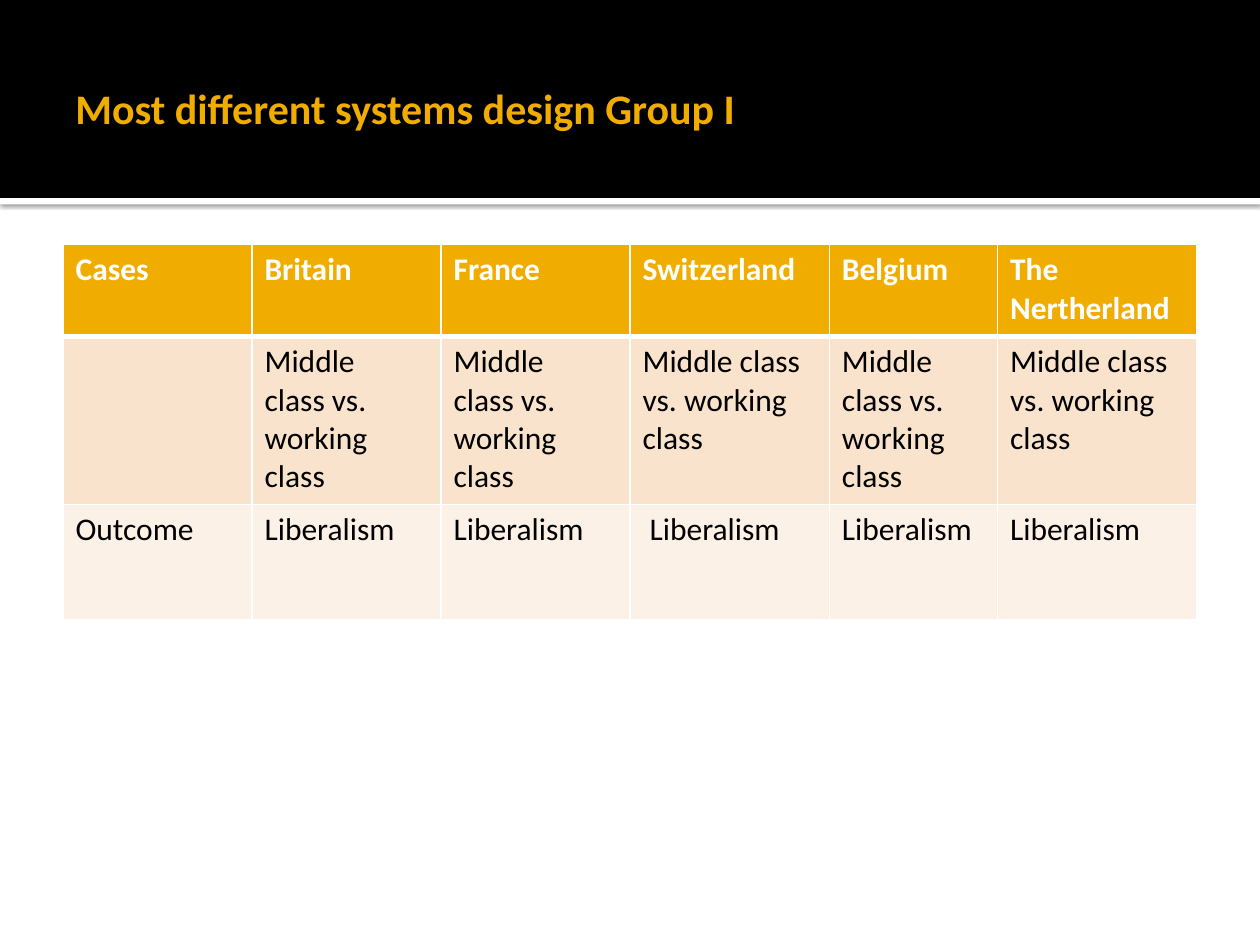
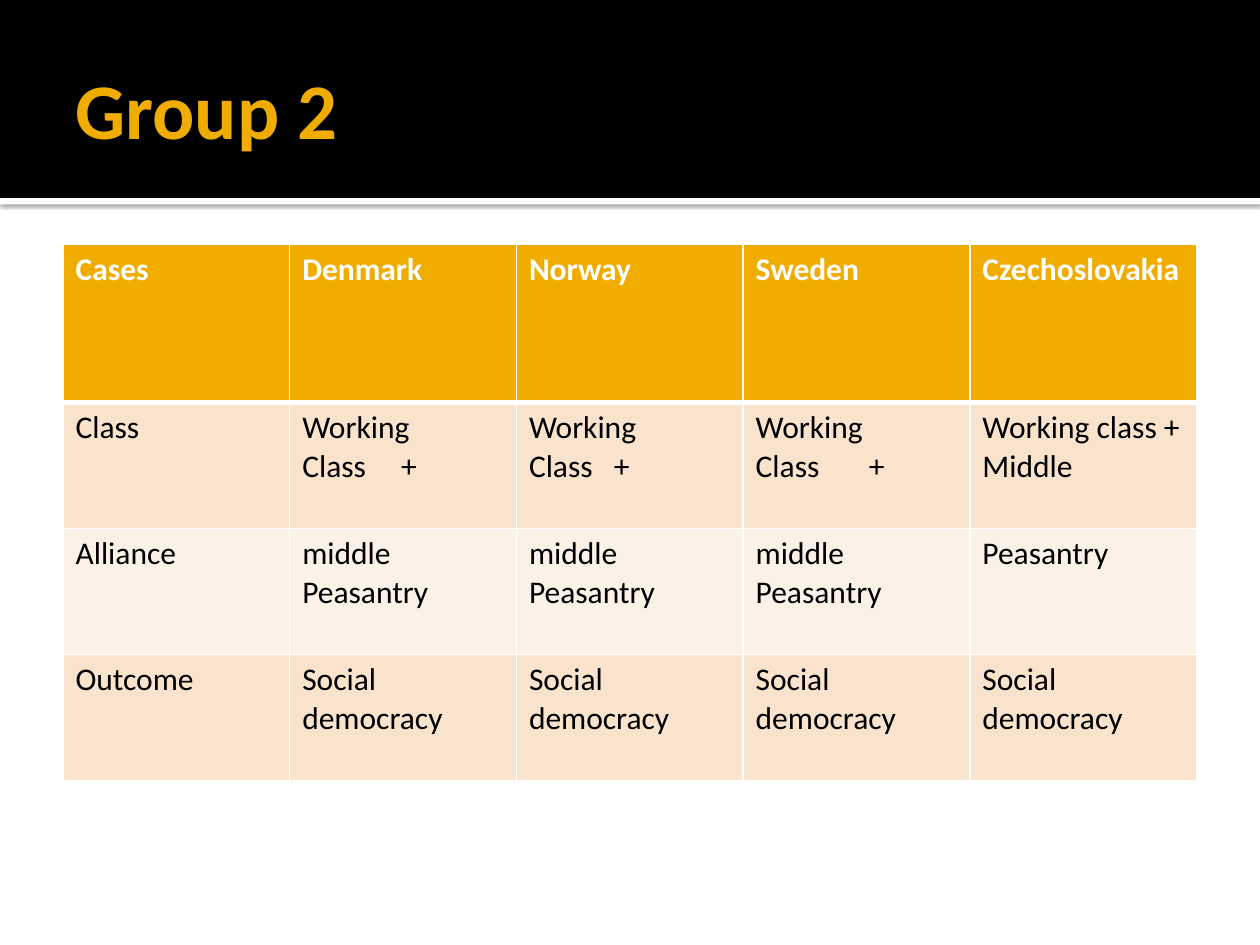
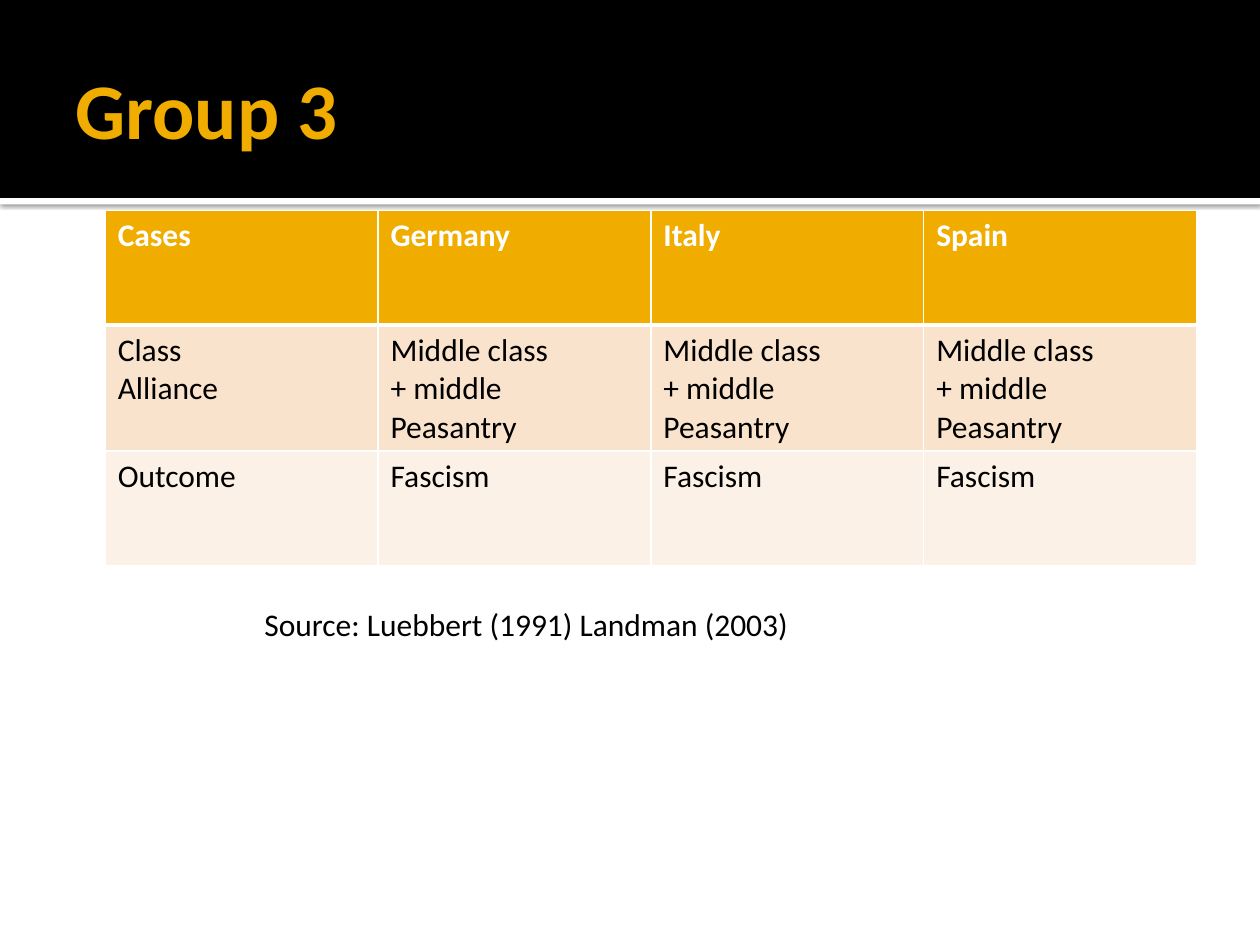
from dataclasses import dataclass

from lxml import etree
from pptx import Presentation
from pptx.dml.color import RGBColor
from pptx.enum.shapes import MSO_SHAPE
from pptx.enum.text import MSO_ANCHOR
from pptx.oxml import parse_xml
from pptx.oxml.ns import nsdecls, qn
from pptx.util import Cm, Pt

RECTANGLE = MSO_SHAPE.RECTANGLE
MIDDLE = MSO_ANCHOR.MIDDLE

FONT = "Calibri"
BODY_SIZE = 18
COLORS = {
    "black": "000000",
    "white": "FFFFFF",
    "gold": "F0AD00",
    "peach": "F9E3CC",
    "cream": "FCF1E7",
}
SLIDE_WIDTH, SLIDE_HEIGHT = 25.4, 19.05
BAND_HEIGHT = 3.99
STRIP_HEIGHT = 0.13
THIN, THICK = 1, 3


@dataclass(frozen=True)
class Box:
    left: float
    top: float
    width: float
    height: float


@dataclass(frozen=True)
class CaseTable:
    left: float
    top: float
    widths: list[float]
    heights: list[float]
    rows: list[list[str]]


@dataclass(frozen=True)
class GroupSlide:
    title: str
    cases: CaseTable
    title_size: int = 45
    source: str = ""


TITLE_BOX = Box(1.27, 0.43, 22.86, 3.48)
SOURCE_BOX = Box(5.08, 12.07, 15.44, 1.02)

WORKERS_NARROW = "Middle\nclass vs.\nworking\nclass"
WORKERS_WIDE = "Middle class\nvs. working\nclass"

GROUPS = [
    GroupSlide(
        "Most different systems design Group I",
        CaseTable(
            1.27, 4.93, [3.81, 3.81, 3.81, 4.02, 3.39, 4.02], [1.85, 3.39, 2.33],
            [
                ["Cases", "Britain", "France", "Switzerland", "Belgium", "The\nNertherland"],
                ["", WORKERS_NARROW, WORKERS_NARROW, WORKERS_WIDE, WORKERS_NARROW, WORKERS_WIDE],
                ["Outcome", "Liberalism", "Liberalism", " Liberalism", "Liberalism", "Liberalism"],
            ],
        ),
        title_size=24,
    ),
    GroupSlide(
        "Group 2",
        CaseTable(
            1.27, 4.93, [4.57] * 5, [3.18] + [2.54] * 3,
            [
                ["Cases", "Denmark", "Norway", "Sweden", "Czechoslovakia"],
                ["Class"] + ["Working\nClass\t+"] * 3 + ["Working class +\nMiddle"],
                ["Alliance"] + ["middle\nPeasantry"] * 3 + ["Peasantry"],
                ["Outcome"] + ["Social\ndemocracy"] * 4,
            ],
        ),
    ),
    GroupSlide(
        "Group 3",
        CaseTable(
            2.12, 4.24, [5.5] * 4, [2.31, 2.36, 2.31],
            [
                ["Cases", "Germany", "Italy", "Spain"],
                ["Class\nAlliance"] + ["Middle class\n+ middle\nPeasantry"] * 3,
                ["Outcome"] + ["Fascism"] * 3,
            ],
        ),
        source="Source: Luebbert (1991) Landman (2003)",
    ),
]
PLUS_SIGN_TABS = {"Denmark": 1.99, "Norway": 1.71, "Sweden": 2.28}


def rgb(color: str) -> RGBColor:
    return RGBColor.from_string(COLORS[color])


def write(frame, text: str, size: int, color: str, bold: bool = False) -> None:
    frame.text = text
    for paragraph in frame.paragraphs:
        font = paragraph.font
        font.name, font.size, font.bold = FONT, Pt(size), bold
        font.color.rgb = rgb(color)


def add_band(slide, top: float, height: float, color: str):
    band = slide.shapes.add_shape(RECTANGLE, 0, Cm(top), Cm(SLIDE_WIDTH), Cm(height))
    band.fill.solid()
    band.fill.fore_color.rgb = rgb(color)
    band.line.fill.background()
    band.shadow.inherit = False
    return band


def add_header(slide) -> None:
    """Draw the white strip with its soft shadow, then the black title band."""
    strip = add_band(slide, BAND_HEIGHT, STRIP_HEIGHT, "white")
    effects = strip._element.spPr.find(qn("a:effectLst"))
    effects.append(parse_xml(
        f'<a:outerShdw {nsdecls("a")} blurRad="{Pt(2.5)}" dist="{Pt(0.8)}" dir="5400000" '
        f'algn="tl" rotWithShape="0"><a:srgbClr val="{COLORS["black"]}">'
        '<a:alpha val="60000"/></a:srgbClr></a:outerShdw>'
    ))
    add_band(slide, 0, BAND_HEIGHT, "black")


def add_text(slide, box: Box, text: str, size: int, color: str, bold: bool = False):
    area = slide.shapes.add_textbox(Cm(box.left), Cm(box.top), Cm(box.width), Cm(box.height))
    frame = area.text_frame
    frame.word_wrap = True
    write(frame, text, size, color, bold)
    return frame


def add_title(slide, text: str, size: int) -> None:
    frame = add_text(slide, TITLE_BOX, text, size, "gold", bold=True)
    frame.vertical_anchor = MIDDLE
    frame.margin_right = Cm(0.13)


def set_borders(cell, top: int, bottom: int) -> None:
    properties = cell._tc.get_or_add_tcPr()
    for side, width in (("L", THIN), ("R", THIN), ("T", top), ("B", bottom)):
        line = etree.SubElement(properties, qn(f"a:ln{side}"), w=str(Pt(width)))
        fill = etree.SubElement(line, qn("a:solidFill"))
        etree.SubElement(fill, qn("a:srgbClr"), val=COLORS["white"])


def set_tab_stop(paragraph, position: float) -> None:
    stops = parse_xml(
        f'<a:tabLst {nsdecls("a")}><a:tab pos="{Cm(position)}" algn="l"/></a:tabLst>'
    )
    paragraph._p.get_or_add_pPr().insert(0, stops)


def fill_cell(cell, text: str, row: int, country: str) -> None:
    is_header = row == 0
    set_borders(cell, THICK if row == 1 else THIN, THICK if is_header else THIN)
    cell.fill.solid()
    cell.fill.fore_color.rgb = rgb("gold" if is_header else ("cream", "peach")[row % 2])
    write(cell.text_frame, text, BODY_SIZE, "white" if is_header else "black", is_header)
    for paragraph in cell.text_frame.paragraphs:
        if "\t" in paragraph.text:
            set_tab_stop(paragraph, PLUS_SIGN_TABS[country])


def add_cases(slide, cases: CaseTable) -> None:
    table = slide.shapes.add_table(
        len(cases.rows), len(cases.widths), Cm(cases.left), Cm(cases.top),
        Cm(sum(cases.widths)), Cm(sum(cases.heights)),
    ).table
    table.horz_banding = False
    for column, width in zip(table.columns, cases.widths):
        column.width = Cm(width)
    for row, height in zip(table.rows, cases.heights):
        row.height = Cm(height)
    for r, texts in enumerate(cases.rows):
        for c, text in enumerate(texts):
            fill_cell(table.cell(r, c), text, r, cases.rows[0][c])


def main() -> None:
    deck = Presentation()
    deck.slide_width, deck.slide_height = Cm(SLIDE_WIDTH), Cm(SLIDE_HEIGHT)
    blank = deck.slide_layouts[6]
    for group in GROUPS:
        slide = deck.slides.add_slide(blank)
        add_header(slide)
        add_title(slide, group.title, group.title_size)
        add_cases(slide, group.cases)
        if group.source:
            add_text(slide, SOURCE_BOX, group.source, BODY_SIZE, "black")
    deck.save("out.pptx")


if __name__ == "__main__":
    main()
